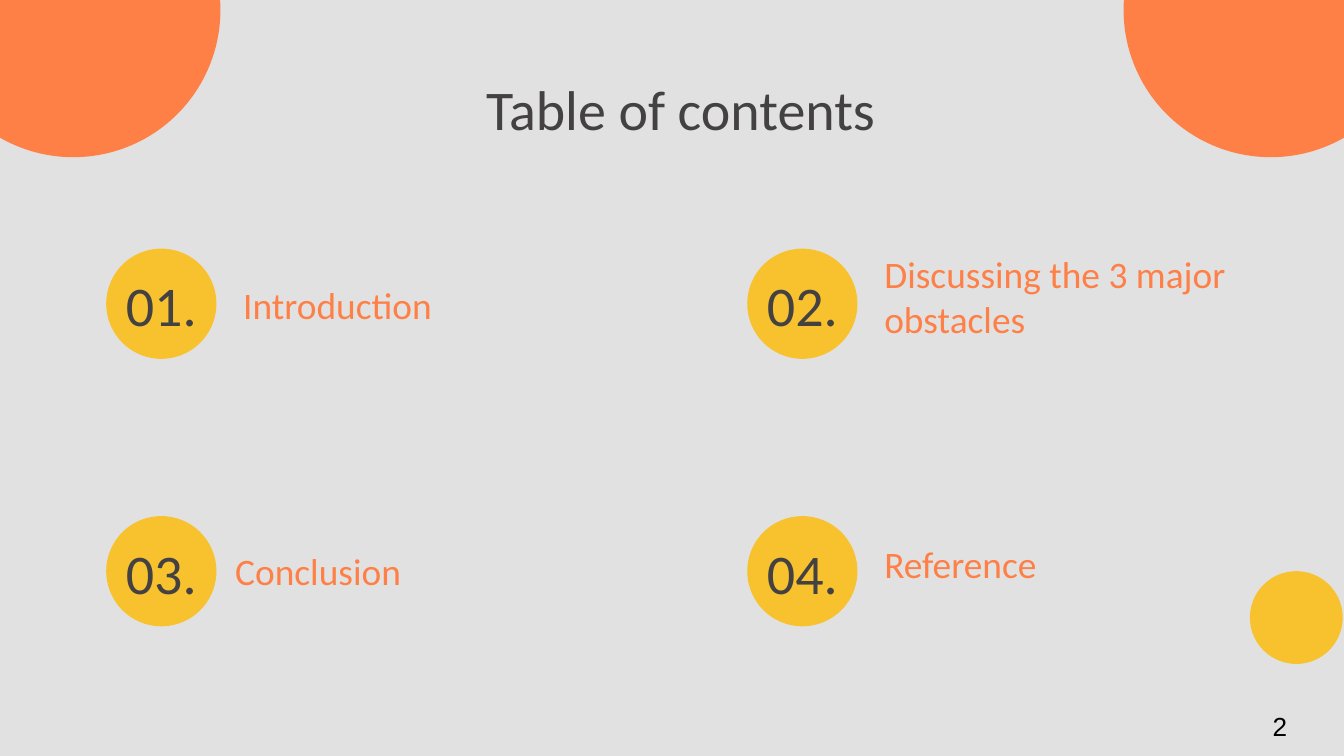
from pptx import Presentation
from pptx import util as u
from pptx.dml import color
from pptx.enum import shapes, text

COLORS = {"paper": "E1E1E1", "orange": "FE8047", "yellow": "F8C22E",
          "ink": "434142", "black": "000000"}
SLIDE_W = 10
SLIDE_H = SLIDE_W * 9 / 16
TITLE = "Table of contents"
PAGE_NUMBER = "2"
ENTRIES = [
    ("01.", "Introduction", (1.02, 0.16)),
    ("02.", "Discussing the 3 major obstacles", (1.02, 0.1)),
    ("03.", "Conclusion", (0.96, 0.15)),
    ("04.", "Reference", (1.02, 0.1)),
]
CORNER_DISCS = [(8.36, -1.02, 2.19, "orange"), (-0.55, -1.02, 2.19, "orange"),
                (9.3, 4.25, 0.69, "yellow")]
GRID_X, GRID_Y = 0.79, 1.85
COL_STEP, ROW_STEP = 4.77, 1.99
BADGE = 0.82
NUMBER_W, NUMBER_H = 0.69, 0.63


def rgb(name):
    return color.RGBColor.from_string(COLORS[name])


def add_disc(s, x, y, size, fill):
    sp = s.shapes.add_shape(shapes.MSO_SHAPE.OVAL, *map(u.Inches, (x, y, size, size)))
    sp.shadow.inherit = False
    sp.fill.solid()
    sp.fill.fore_color.rgb = rgb(fill)
    sp.line.fill.background()


def add_text(s, box, words, size, ink, align=text.PP_ALIGN.LEFT,
             font="Calibri", inset=0, anchor=text.MSO_ANCHOR.MIDDLE):
    tf = s.shapes.add_textbox(*map(u.Inches, box)).text_frame
    tf.word_wrap = True
    tf.vertical_anchor = anchor
    tf.margin_left = tf.margin_right = u.Inches(inset)
    tf.margin_top = tf.margin_bottom = u.Inches(inset / 2)
    p = tf.paragraphs[0]
    p.alignment = align
    r = p.add_run()
    r.text = words
    r.font.name = font
    r.font.size = u.Pt(size)
    r.font.color.rgb = rgb(ink)


def main():
    prs = Presentation()
    prs.slide_width, prs.slide_height = u.Inches(SLIDE_W), u.Inches(SLIDE_H)
    s = prs.slides.add_slide(prs.slide_layouts[6])
    s.background.fill.solid()
    s.background.fill.fore_color.rgb = rgb("paper")

    for disc in CORNER_DISCS:
        add_disc(s, *disc)

    center = text.PP_ALIGN.CENTER
    add_text(s, (0.85, 0.49, 8.43, 0.63), TITLE, 30, "ink", center)

    for i, (number, label, (dx, dy)) in enumerate(ENTRIES):
        row, col = divmod(i, 2)
        x, y = GRID_X + col * COL_STEP, GRID_Y + row * ROW_STEP
        number_x = x + (BADGE - NUMBER_W) / 2
        add_disc(s, x, y, BADGE, "yellow")
        add_text(s, (number_x, y + 0.1, NUMBER_W, NUMBER_H), number, 30, "ink", center)
        add_text(s, (x + dx, y + dy, 2.63, 0.51), label, 20, "orange")

    add_text(s, (9.37, 5.24, 0.63, 0.34), PAGE_NUMBER, 14, "black",
             font="Arial", inset=0.1, anchor=text.MSO_ANCHOR.TOP)
    prs.save("out.pptx")


if __name__ == "__main__":
    main()
